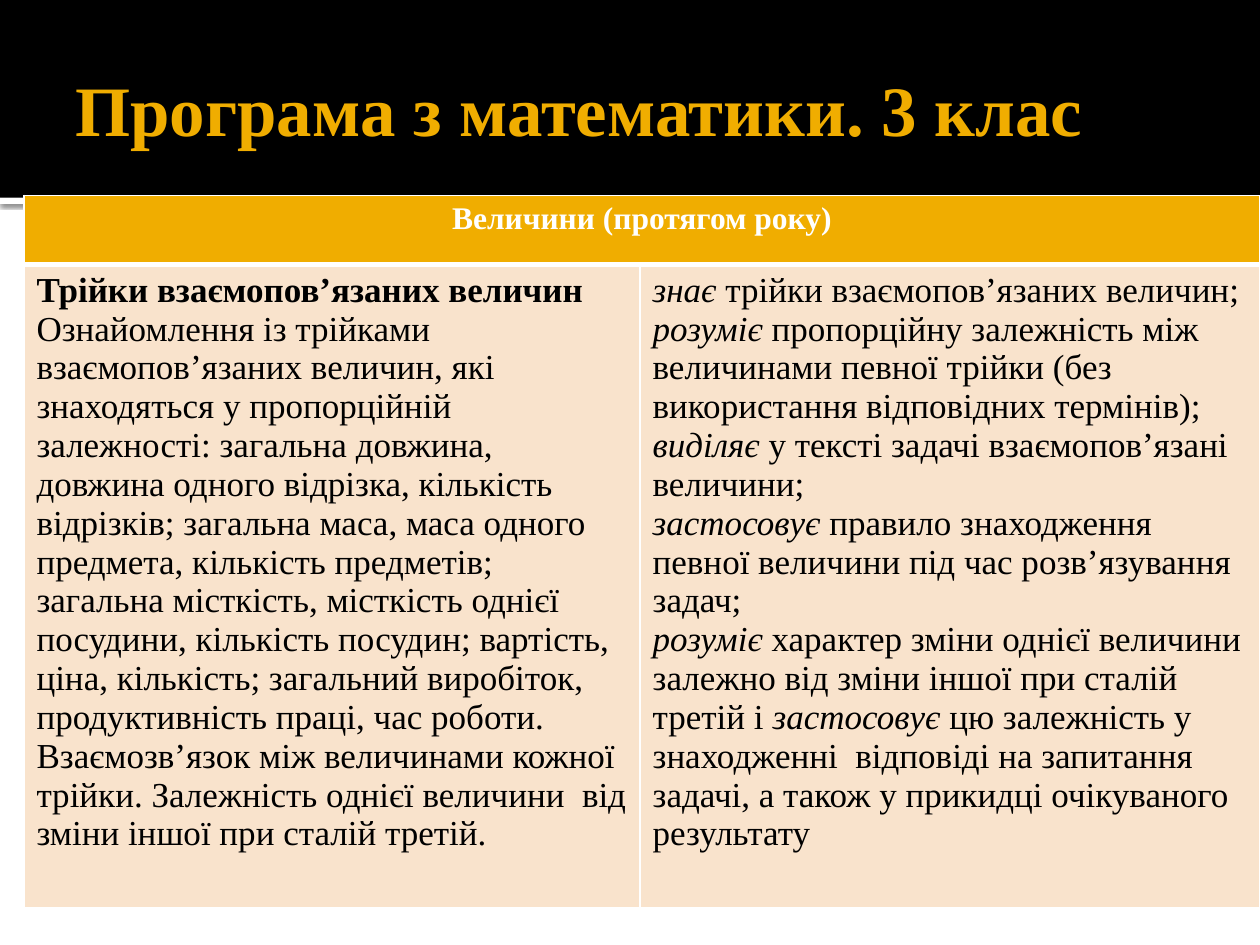
from lxml import etree
from pptx import Presentation
from pptx.dml.color import RGBColor
from pptx.enum.shapes import MSO_SHAPE
from pptx.enum.text import MSO_ANCHOR, PP_ALIGN
from pptx.oxml import parse_xml
from pptx.oxml.ns import nsdecls, qn
from pptx.util import Pt

COLORS = {"white": "FFFFFF", "black": "000000", "gold": "F0AD00", "peach": "F9E3CC"}
FONT = "Times New Roman"

QUANTITIES = [
    [("Трійки взаємопов’язаних величин", "bold")],
    [("Ознайомлення із трійками взаємопов’язаних величин, які знаходяться у "
      "пропорційній залежності: загальна довжина, довжина одного відрізка, "
      "кількість відрізків; загальна маса, маса одного предмета, кількість "
      "предметів; загальна місткість, місткість однієї посудини, кількість "
      "посудин; вартість, ціна, кількість; загальний виробіток, "
      "продуктивність праці, час роботи.", "")],
    [("Взаємозв’язок між величинами кожної трійки. Залежність однієї величини  "
      "від зміни іншої при сталій третій.", "")],
]
SKILLS = [
    [("знає", "italic"), (" трійки взаємопов’язаних величин;", "")],
    [("розуміє ", "italic"),
     ("пропорційну залежність між величинами певної трійки (без використання "
      "відповідних термінів);", "")],
    [("виділяє ", "italic"), ("у тексті задачі взаємопов’язані величини;", "")],
    [("застосовує", "italic"),
     (" правило знаходження певної величини під час розв’язування задач;", "")],
    [("розуміє ", "italic"),
     ("характер зміни однієї величини залежно від зміни іншої при сталій "
      "третій і ", ""),
     ("застосовує", "italic"),
     (" цю залежність у знаходженні  відповіді на запитання задачі, а також у "
      "прикидці очікуваного результату", "")],
]


def add_run(paragraph, text, size, color, style=""):
    run = paragraph.add_run()
    run.text = text
    font = run.font
    font.name, font.size = FONT, Pt(size)
    font.bold, font.italic = style == "bold", style == "italic"
    font.color.rgb = RGBColor.from_string(COLORS[color])


def style_cell(cell, fill, bottom_width=1):
    """Fill the cell and draw its four white borders."""
    properties = cell._tc.get_or_add_tcPr()
    for side, width in (("L", 1), ("R", 1), ("T", 1), ("B", bottom_width)):
        border = etree.SubElement(properties, qn(f"a:ln{side}"), w=str(Pt(width)))
        solid = etree.SubElement(border, qn("a:solidFill"))
        etree.SubElement(solid, qn("a:srgbClr"), val=COLORS["white"])
    cell.fill.solid()
    cell.fill.fore_color.rgb = RGBColor.from_string(COLORS[fill])


presentation = Presentation()
presentation.slide_width, presentation.slide_height = Pt(720), Pt(540)
slide = presentation.slides.add_slide(presentation.slide_layouts[6])
slide.background.fill.solid()
slide.background.fill.fore_color.rgb = RGBColor.from_string(COLORS["white"])

# Header band with a shadowed white strip under it
for top, height, color in ((113, 3.6, "white"), (0, 113, "black")):
    band = slide.shapes.add_shape(MSO_SHAPE.RECTANGLE, 0, Pt(top), Pt(720), Pt(height))
    band.shadow.inherit = False
    band.fill.solid()
    band.fill.fore_color.rgb = RGBColor.from_string(COLORS[color])
    band.line.fill.background()
    if color == "white":
        band._element.spPr.find(qn("a:effectLst")).append(parse_xml(
            f'<a:outerShdw {nsdecls("a")} blurRad="{Pt(2.5)}" dist="{Pt(0.8)}" '
            'dir="5400000" rotWithShape="0"><a:srgbClr val="000000">'
            '<a:alpha val="60000"/></a:srgbClr></a:outerShdw>'))

# Title
title = slide.shapes.add_textbox(Pt(36), Pt(12.24), Pt(648), Pt(98.64))
frame = title.text_frame
frame.word_wrap = True
frame.vertical_anchor = MSO_ANCHOR.MIDDLE
frame.margin_left, frame.margin_right = Pt(7.2), Pt(3.6)
add_run(frame.paragraphs[0], "Програма з математики. 3 клас", 40.5, "gold", "bold")

# Programme table
table = slide.shapes.add_table(2, 2, Pt(13.68), Pt(111.6), Pt(706.32), Pt(379.6)).table
table.columns[0].width, table.columns[1].width = Pt(352.08), Pt(354.24)
table.rows[0].height, table.rows[1].height = Pt(39.6), Pt(340)

heading = table.cell(0, 0)
heading.merge(table.cell(0, 1))
for cell in table.rows[0].cells:
    style_cell(cell, "gold", bottom_width=3)
paragraph = heading.text_frame.paragraphs[0]
paragraph.alignment = PP_ALIGN.CENTER
add_run(paragraph, "Величини (протягом року)", 18, "white", "bold")

for column, paragraphs in enumerate((QUANTITIES, SKILLS)):
    cell = table.cell(1, column)
    style_cell(cell, "peach")
    for index, runs in enumerate(paragraphs):
        frame = cell.text_frame
        paragraph = frame.add_paragraph() if index else frame.paragraphs[0]
        for text, style in runs:
            add_run(paragraph, text, 20, "black", style)

presentation.save("out.pptx")
